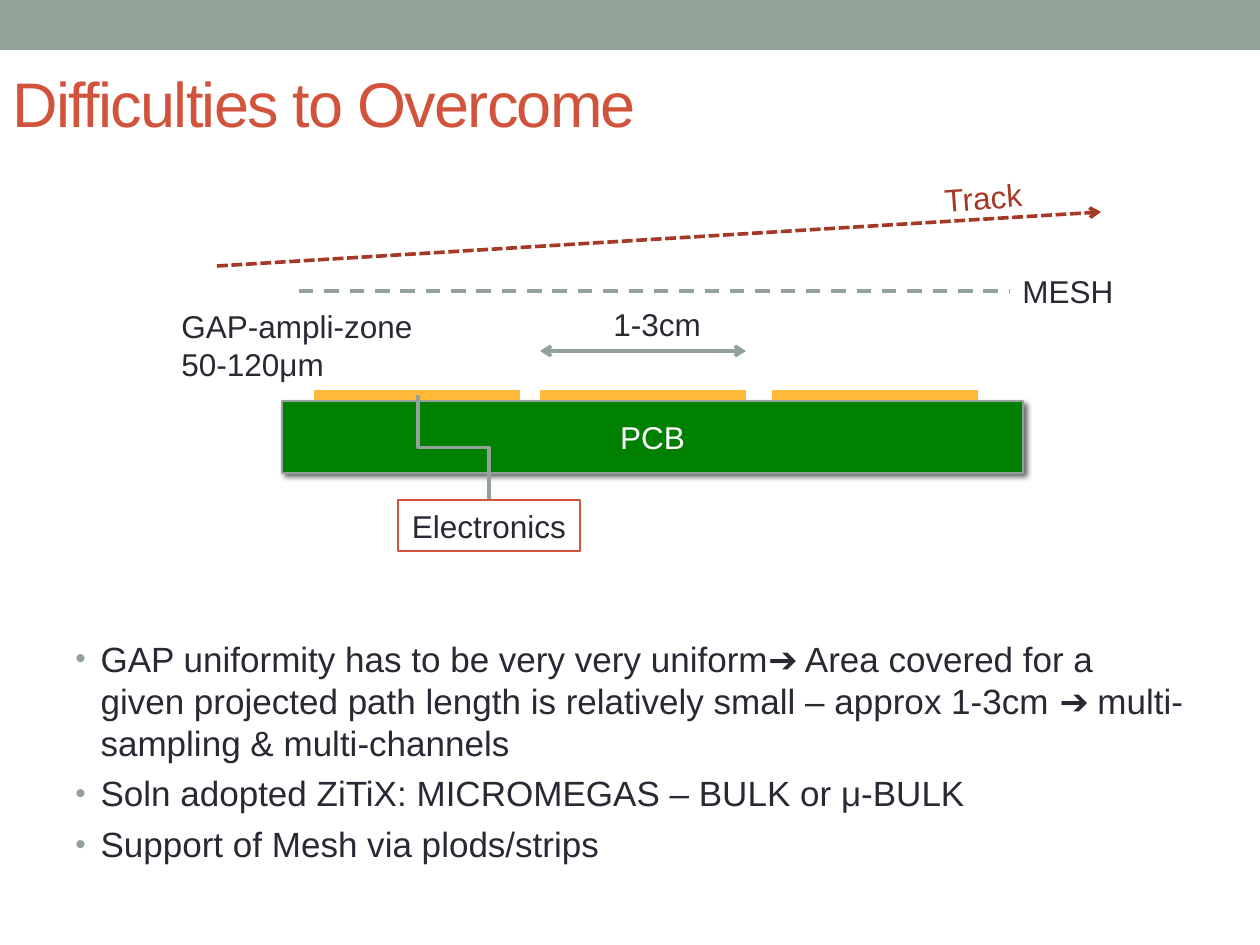
import pptx
import pptx.util
import pptx.dml.color
import pptx.enum.dml
import pptx.enum.shapes
import pptx.enum.text
import pptx.oxml
import pptx.oxml.ns

PX = 914400 // 126
SLIDE = (1260, 945)
THEME = {
    "font": "Arial",
    "colors": {"sage": "93A299", "red": "D2533C", "ink": "292934", "board": "008000",
               "copper": "FFB938", "rust": "A53926", "white": "FFFFFF"},
    "sizes": {"title": 36, "body": 20, "label": 18},
    "lines": {"thin": 0.75, "normal": 2.08, "electrode": 6},
}

TITLE = "Difficulties to Overcome"
BULLETS = [
    "GAP uniformity has to be very very uniform➔ Area covered for a given projected path "
    "length is relatively small – approx 1-3cm ➔ multi-sampling & multi-channels",
    "Soln adopted ZiTiX: MICROMEGAS – BULK or μ-BULK",
    "Support of Mesh via plods/strips",
]
# lines of text, (left, top, width, height), colour, rotation
LABELS = [
    (["GAP-ampli-zone", "50-120μm"], (169, 301, 258, 89), "ink", 0),
    (["1-3cm"], (601, 299, 113, 50), "ink", 0),
    (["MESH"], (1010, 266, 117, 50), "ink", 0),
    (["Track"], (932, 172, 103, 50), "rust", 355.7),
]
# start, end, colour, line width, dash, arrowheads
LINES = [
    ((299, 291), (1010, 291), "sage", "normal", "DASH", ()),
    ((540, 351), (746, 351), "sage", "normal", None, ("headEnd", "tailEnd")),
    ((217, 266), (1101, 212), "rust", "normal", "SQUARE_DOT", ("tailEnd",)),
]
ELECTRODES = [314, 540, 772]
ELECTRODE_WIDTH, ELECTRODE_Y = 206, 395
BAR = (0, 0, 1260, 50)
BOARD = (282, 401, 741, 72)
ELECTRONICS = (398, 500, 182, 51)
WIRE_START = (418, 395)

deck = pptx.Presentation()
deck.slide_width, deck.slide_height = (side * PX for side in SLIDE)
page = deck.slides.add_slide(deck.slide_layouts[6])


def emu(lengths):
    return [round(length * PX) for length in lengths]


def color(name):
    return pptx.dml.color.RGBColor.from_string(THEME["colors"][name])


def add_xml(parent, markup):
    namespaces = pptx.oxml.ns.nsdecls("a")
    element = pptx.oxml.parse_xml(markup.replace(">", f" {namespaces}>", 1)
                                  if "/>" not in markup.split(">")[0] + ">"
                                  else markup.replace("/>", f" {namespaces}/>", 1))
    parent.append(element)


def set_line(line, name, width):
    line.color.rgb = color(name)
    line.width = pptx.util.Pt(THEME["lines"][width])


def write(shape, texts, size, name, **frame_format):
    """Fill the text frame with one paragraph per text and return the paragraphs."""
    frame = shape.text_frame
    for key, value in {"word_wrap": True, **frame_format}.items():
        setattr(frame, key, value)
    for index, text in enumerate(texts):
        para = frame.paragraphs[0] if index == 0 else frame.add_paragraph()
        span = para.add_run()
        span.text = text
        font_format = {"name": THEME["font"], "size": pptx.util.Pt(THEME["sizes"][size])}
        for key, value in font_format.items():
            setattr(span.font, key, value)
        span.font.color.rgb = color(name)
    return frame.paragraphs


def add_box(place, fill=None, outline=None):
    box = page.shapes.add_shape(pptx.enum.shapes.MSO_SHAPE.RECTANGLE, *emu(place))
    box.shadow.inherit = False
    if fill:
        box.fill.solid()
        box.fill.fore_color.rgb = color(fill)
    else:
        box.fill.background()
    if outline:
        set_line(box.line, outline, "thin")
    else:
        box.line.fill.background()
    return box


def add_line(start, end, name, width, dash=None, arrows=(), kind="STRAIGHT"):
    connector_type = pptx.enum.shapes.MSO_CONNECTOR[kind]
    line = page.shapes.add_connector(connector_type, *emu(start + end))
    set_line(line.line, name, width)
    if dash:
        line.line.dash_style = pptx.enum.dml.MSO_LINE[dash]
    outline = line.line._get_or_add_ln()
    for arrow in arrows:
        add_xml(outline, f'<a:{arrow} type="arrow"/>')
    add_xml(line.element.spPr, "<a:effectLst/>")
    return line


def add_wire(start, end):
    """Draw an elbow that leaves downwards: a sideways elbow turned by 270 degrees."""
    (x1, y1), (x2, y2) = start, end
    center_x, center_y = (x1 + x2) / 2, (y1 + y2) / 2
    half_width, half_height = (y2 - y1) / 2, (x2 - x1) / 2
    wire = add_line((center_x + half_width, center_y - half_height),
                    (center_x - half_width, center_y + half_height),
                    "sage", "normal", kind="ELBOW")
    wire.element.spPr.xfrm.set("rot", str(270 * 60000))


def add_shadow(shape):
    effects = shape.element.spPr.find(pptx.oxml.ns.qn("a:effectLst"))
    add_xml(effects, '<a:outerShdw blurRad="38100" dist="25400" dir="2700000" rotWithShape="0">'
                     '<a:srgbClr val="000000"><a:alpha val="60000"/></a:srgbClr></a:outerShdw>')


def add_bullet(para):
    properties = para._p.get_or_add_pPr()
    indent = round(0.2 * 914400)
    properties.set("marL", str(indent))
    properties.set("indent", str(-indent))
    add_xml(properties, f'<a:buClr><a:srgbClr val="{THEME["colors"]["sage"]}"/></a:buClr>')
    add_xml(properties, '<a:buSzPct val="85000"/>')
    add_xml(properties, '<a:buFont typeface="Arial"/>')
    add_xml(properties, '<a:buChar char="•"/>')


MIDDLE = pptx.enum.text.MSO_ANCHOR.MIDDLE
CENTER = pptx.enum.text.PP_ALIGN.CENTER

add_box(BAR, fill="sage")

title = page.shapes.add_textbox(*emu((0, 34, 1134, 136)))
title_para = write(title, [TITLE], "title", "red", vertical_anchor=MIDDLE)[0]
title_para.runs[0].font._element.set("spc", "-100")

body = page.shapes.add_textbox(*emu((63, 631, 1134, 250)))
for index, para in enumerate(write(body, BULLETS, "body", "ink")):
    para.space_before = pptx.util.Pt(5 if index else 0)
    add_bullet(para)

board = add_box(BOARD, fill="board", outline="sage")
add_shadow(board)
write(board, ["PCB"], "label", "white", vertical_anchor=MIDDLE)[0].alignment = CENTER

for left in ELECTRODES:
    add_line((left, ELECTRODE_Y), (left + ELECTRODE_WIDTH, ELECTRODE_Y), "copper", "electrode")
for line in LINES:
    add_line(*line)

left, top, width, height = ELECTRONICS
add_wire(WIRE_START, (left + width / 2, top))
electronics = add_box(ELECTRONICS, outline="red")
write(electronics, ["Electronics"], "label", "ink", word_wrap=False,
      vertical_anchor=MIDDLE)[0].alignment = CENTER

for texts, place, name, rotation in LABELS:
    label = page.shapes.add_textbox(*emu(place))
    label.rotation = rotation
    write(label, texts, "label", name, word_wrap=False)

deck.save("out.pptx")
